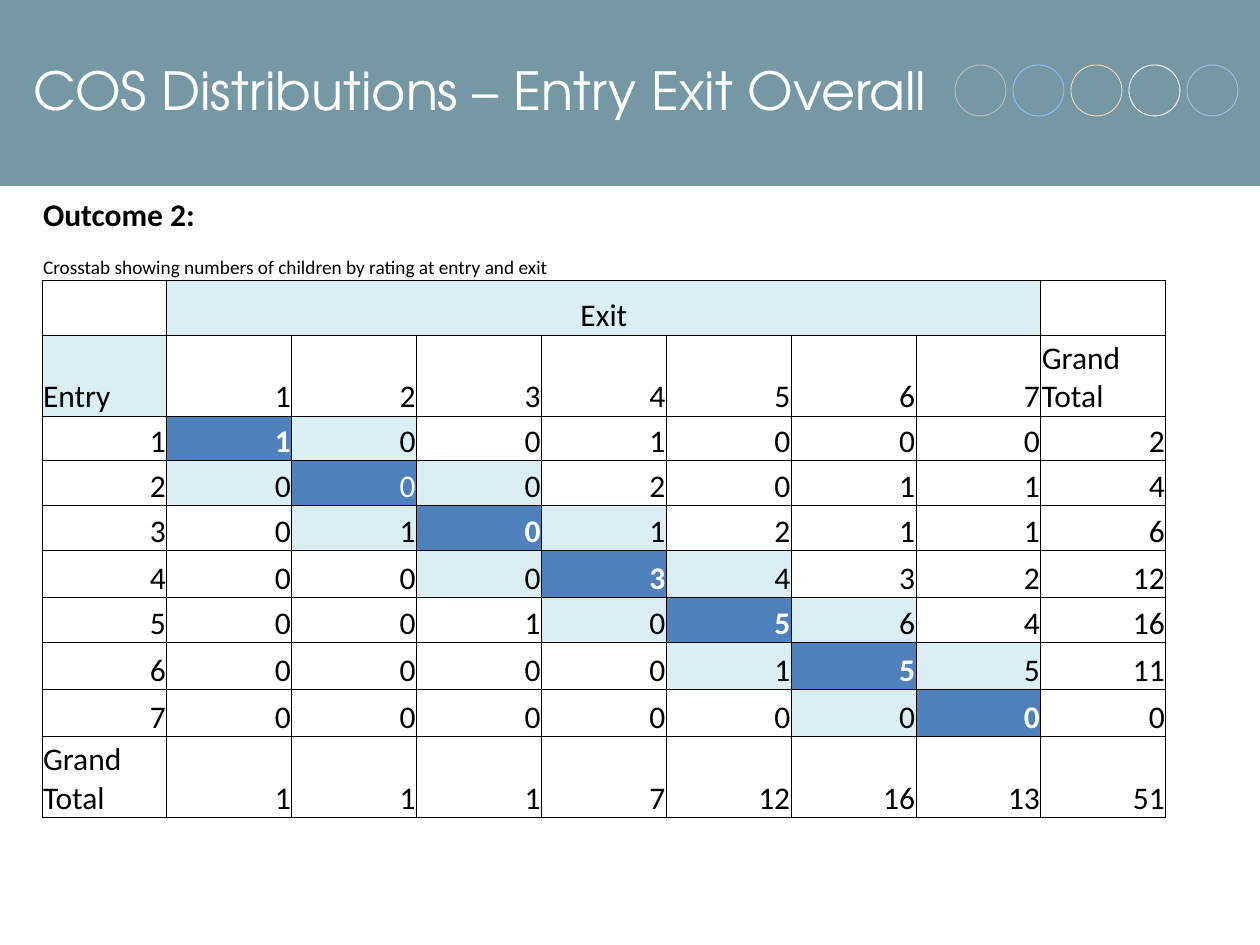
from dataclasses import dataclass

from lxml import etree
from pptx import Presentation
from pptx.dml.color import RGBColor
from pptx.enum.shapes import MSO_SHAPE
from pptx.enum.text import MSO_ANCHOR, PP_ALIGN
from pptx.oxml.ns import qn
from pptx.util import Emu, Pt

RECTANGLE, OVAL = MSO_SHAPE.RECTANGLE, MSO_SHAPE.OVAL
MIDDLE, BOTTOM = MSO_ANCHOR.MIDDLE, MSO_ANCHOR.BOTTOM
LEFT, CENTER, RIGHT = PP_ALIGN.LEFT, PP_ALIGN.CENTER, PP_ALIGN.RIGHT


@dataclass(frozen=True)
class Theme:
    band: str = "7698A4"
    white: str = "FFFFFF"
    black: str = "000000"
    diagonal: str = "4F81BD"
    pale: str = "DAEEF3"
    circles: tuple = ("BFBFBF", "8DC0FD", "FFD7AF", "FFFFFF", "ADBEE6")
    title_font: str = "TeX Gyre Adventor"
    body_font: str = "Calibri"
    title_size: float = 30
    body_size: float = 18
    caption_size: float = 11
    line_width: float = 0.5


THEME = Theme()

ROW_HEIGHTS = (46, 45, 55, 81, 45, 45, 45, 47, 45, 47, 47, 81)
HEADING_ROW, CAPTION_ROW, EXIT_ROW, RATING_ROW = range(4)
RATINGS = range(1, 8)
TOTAL_COLUMN = len(RATINGS) + 1
PLAIN_DIAGONAL_RATING = 2

# Children by entry rating (rows) and exit rating (columns)
COUNTS = (
    (1, 0, 0, 1, 0, 0, 0),
    (0, 0, 0, 2, 0, 1, 1),
    (0, 1, 0, 1, 2, 1, 1),
    (0, 0, 0, 3, 4, 3, 2),
    (0, 0, 1, 0, 5, 6, 4),
    (0, 0, 0, 0, 1, 5, 5),
    (0, 0, 0, 0, 0, 0, 0),
)


def px(length):
    return Emu(round(length * 914400 / 126))


def rgb(value):
    return RGBColor.from_string(value)


def style_paragraph(paragraph, font, size, color, bold=False, align=LEFT):
    paragraph.alignment = align
    paragraph.font.name = font
    paragraph.font.size = Pt(size)
    paragraph.font.bold = bold
    paragraph.font.color.rgb = rgb(color)


def add_figure(slide, kind, left, top, width, height, fill=None, line=None):
    shape = slide.shapes.add_shape(kind, px(left), px(top), px(width), px(height))
    shape.shadow.inherit = False
    if fill:
        shape.fill.solid()
        shape.fill.fore_color.rgb = rgb(fill)
    else:
        shape.fill.background()
    if line:
        shape.line.color.rgb = rgb(line)
        shape.line.width = Pt(THEME.line_width)
    else:
        shape.line.fill.background()


def add_title(slide, text):
    frame = slide.shapes.add_textbox(px(21), px(10), px(924), px(158)).text_frame
    frame.word_wrap = True
    frame.vertical_anchor = MIDDLE
    frame.text = text
    style_paragraph(frame.paragraphs[0], THEME.title_font, THEME.title_size, THEME.white)


def set_borders(cell, ruled_sides):
    properties = cell._tc.get_or_add_tcPr()
    for side in "LRTB":
        line = etree.SubElement(properties, qn(f"a:ln{side}"), w=str(Pt(THEME.line_width)))
        if side in ruled_sides:
            fill = etree.SubElement(line, qn("a:solidFill"))
            etree.SubElement(fill, qn("a:srgbClr"), val=THEME.black)
        else:
            etree.SubElement(line, qn("a:noFill"))


def format_blank_cell(cell, row):
    cell.margin_left = cell.margin_right = cell.margin_top = px(1)
    cell.margin_bottom = 0
    cell.vertical_anchor = BOTTOM
    set_borders(cell, {HEADING_ROW: "", CAPTION_ROW: "B"}.get(row, "LRTB"))
    cell.fill.background()


def fill_cell(cell, text, align=RIGHT, size=THEME.body_size, color=THEME.black,
              bold=False, fill=None):
    cell.text = str(text)
    style_paragraph(cell.text_frame.paragraphs[0], THEME.body_font, size, color, bold, align)
    if fill:
        cell.fill.solid()
        cell.fill.fore_color.rgb = rgb(fill)


def fill_count(cell, count, entry, exit_rating):
    distance = abs(entry - exit_rating)
    if distance == 0:
        fill_cell(cell, count, color=THEME.white, fill=THEME.diagonal,
                  bold=entry != PLAIN_DIAGONAL_RATING)
    else:
        fill_cell(cell, count, fill=THEME.pale if distance == 1 else None)


def add_crosstab(slide):
    table = slide.shapes.add_table(len(ROW_HEIGHTS), TOTAL_COLUMN + 1, px(42), px(189),
                                   px(1124), px(sum(ROW_HEIGHTS))).table
    table.first_row = table.horz_banding = False
    for row, height in enumerate(ROW_HEIGHTS):
        table.rows[row].height = px(height)
        for column in range(TOTAL_COLUMN + 1):
            format_blank_cell(table.cell(row, column), row)

    # Heading, caption and exit header span several columns
    for row, first, last in ((HEADING_ROW, 0, 1), (CAPTION_ROW, 0, 6), (EXIT_ROW, 1, 7)):
        table.cell(row, first).merge(table.cell(row, last))
    fill_cell(table.cell(HEADING_ROW, 0), "Outcome 2:", LEFT, bold=True)
    fill_cell(table.cell(CAPTION_ROW, 0),
              "Crosstab showing numbers of children by rating at entry and exit",
              LEFT, THEME.caption_size)
    fill_cell(table.cell(EXIT_ROW, 1), "Exit", CENTER, fill=THEME.pale)

    # Row and column headers
    total_row = len(ROW_HEIGHTS) - 1
    fill_cell(table.cell(RATING_ROW, 0), "Entry", LEFT, fill=THEME.pale)
    fill_cell(table.cell(RATING_ROW, TOTAL_COLUMN), "Grand Total", LEFT)
    fill_cell(table.cell(total_row, 0), "Grand Total", LEFT)
    for rating in RATINGS:
        fill_cell(table.cell(RATING_ROW, rating), rating)
        fill_cell(table.cell(RATING_ROW + rating, 0), rating)

    # Counts and totals
    for entry, counts in zip(RATINGS, COUNTS):
        row = RATING_ROW + entry
        for exit_rating, count in zip(RATINGS, counts):
            fill_count(table.cell(row, exit_rating), count, entry, exit_rating)
        fill_cell(table.cell(row, TOTAL_COLUMN), sum(counts))
    for exit_rating, counts in zip(RATINGS, zip(*COUNTS)):
        fill_cell(table.cell(total_row, exit_rating), sum(counts))
    fill_cell(table.cell(total_row, TOTAL_COLUMN), sum(map(sum, COUNTS)))


def main():
    presentation = Presentation()
    presentation.slide_width, presentation.slide_height = px(1260), px(945)
    slide = presentation.slides.add_slide(presentation.slide_layouts[6])

    # Title band with a row of circles
    add_figure(slide, RECTANGLE, 0, -3, 1260, 189, fill=THEME.band)
    for index, color in enumerate(THEME.circles):
        add_figure(slide, OVAL, 955 + 58 * index, 65, 51, 51, line=color)
    add_title(slide, "COS Distributions – Entry Exit Overall")

    add_crosstab(slide)
    presentation.save("out.pptx")


if __name__ == "__main__":
    main()
